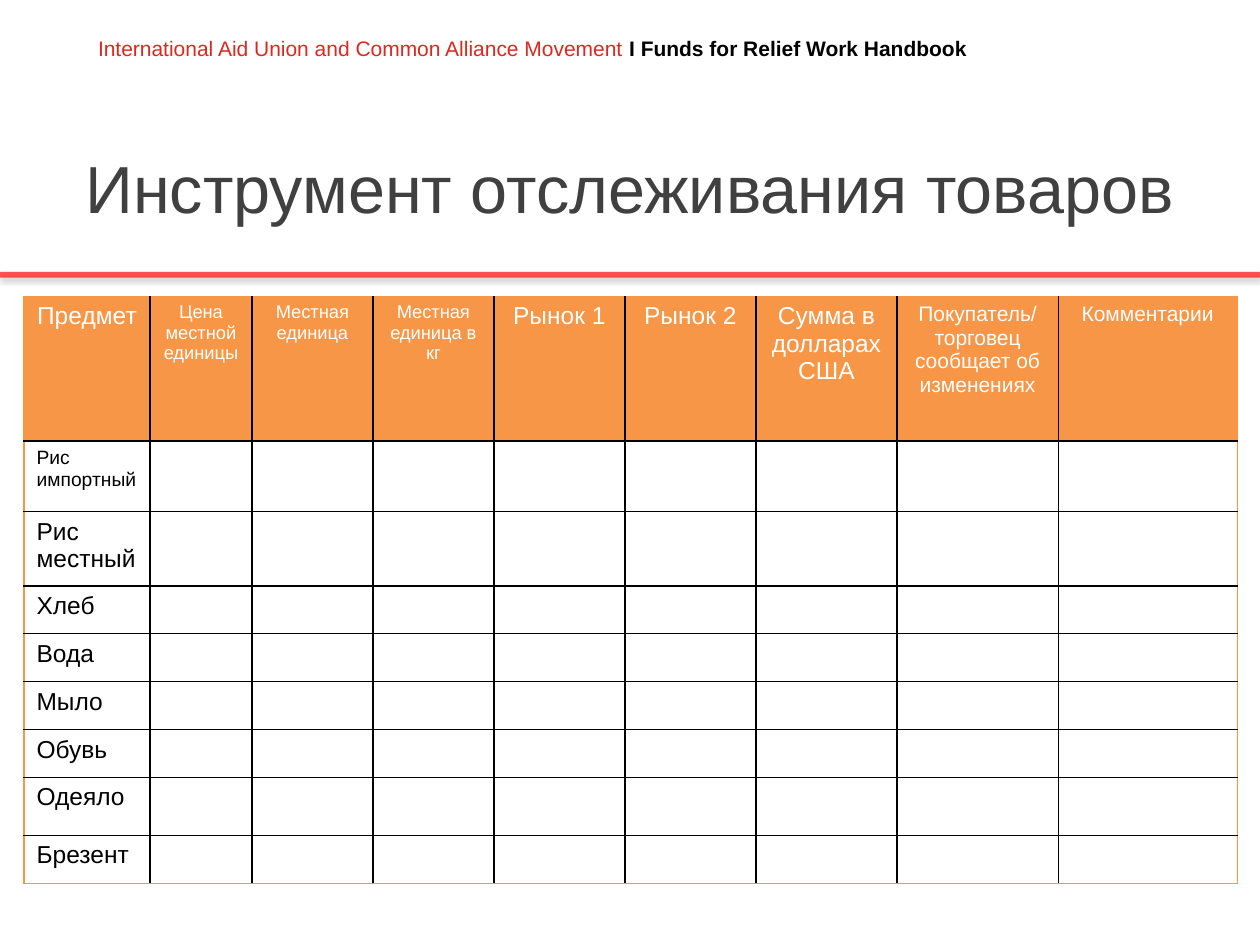
from dataclasses import dataclass

from lxml import etree
from pptx import Presentation
from pptx.dml.color import RGBColor
from pptx.enum.shapes import MSO_CONNECTOR
from pptx.enum.text import MSO_ANCHOR, PP_ALIGN
from pptx.oxml.ns import qn
from pptx.slide import Slide
from pptx.table import Table, _Cell
from pptx.text.text import _Paragraph, _Run
from pptx.util import Inches, Pt

STRAIGHT = MSO_CONNECTOR.STRAIGHT
MIDDLE = MSO_ANCHOR.MIDDLE
LEFT, CENTER = PP_ALIGN.LEFT, PP_ALIGN.CENTER

FONT = "Arial"
BLACK = RGBColor(0, 0, 0)
WHITE = RGBColor(255, 255, 255)
GRAY = RGBColor(0x40, 0x40, 0x40)
BRAND = RGBColor(0xDC, 0x28, 0x1E)
RED = RGBColor(255, 0, 0)
ORANGE = RGBColor(0xF7, 0x96, 0x46)


@dataclass
class Column:
    head: str
    width: float
    size: float = 14


@dataclass
class Row:
    item: str
    height: float = 0.38
    size: float = 14


COLUMNS = [
    Column("Предмет", 1),
    Column("Цена местной единицы", 0.81, 10.5),
    Column("Местная единица", 0.96, 10.5),
    Column("Местная единица в кг", 0.96, 10.5),
    Column("Рынок 1", 1.04),
    Column("Рынок 2", 1.04),
    Column("Сумма в долларах США", 1.12),
    Column("Покупатель/торговец сообщает об изменениях", 1.28, 12),
    Column("Комментарии", 1.42, 12),
]
ROWS = [
    Row("Рис импортный", 0.56, 11),
    Row("Рис местный", 0.59),
    Row("Хлеб"),
    Row("Вода"),
    Row("Мыло"),
    Row("Обувь"),
    Row("Одеяло", 0.46),
    Row("Брезент"),
]
HEAD = 1.15


def style(run: _Run, size: float, color: RGBColor, bold: bool = False) -> None:
    run.font.name = FONT
    run.font.size = Pt(size)
    run.font.bold = bold
    run.font.color.rgb = color


def add_run(para: _Paragraph, text: str, color: RGBColor, bold: bool = False) -> None:
    run = para.add_run()
    run.text = text
    style(run, 12, color, bold)


def add_banner(slide: Slide) -> None:
    box = slide.shapes.add_textbox(Inches(0.68), Inches(0.23), Inches(8.64), Inches(0.3))
    box.text_frame.word_wrap = True
    para = box.text_frame.paragraphs[0]
    add_run(para, "International Aid Union and Common Alliance Movement ", BRAND)
    add_run(para, "I Funds for Relief Work Handbook", BLACK, True)


def add_rule(slide: Slide) -> None:
    rule = slide.shapes.add_connector(STRAIGHT, 0, Inches(2.18), Inches(10), Inches(2.18))
    rule.line.color.rgb = RED
    rule.line.width = Pt(3.25)
    props = rule._element.spPr
    tint = props.find(".//" + qn("a:srgbClr"))
    etree.SubElement(tint, qn("a:alpha"), val="66000")
    glow = etree.SubElement(props, qn("a:effectLst"))
    shade = etree.SubElement(
        glow, qn("a:outerShdw"), blurRad=str(Pt(3.1)), dist=str(Pt(1.6)),
        dir="5400000", rotWithShape="0")
    tint = etree.SubElement(shade, qn("a:srgbClr"), val=str(BLACK))
    etree.SubElement(tint, qn("a:alpha"), val="37000")


def set_title(slide: Slide) -> None:
    title = slide.shapes.title
    title.left, title.top = Inches(0.5), Inches(0.86)
    title.width, title.height = Inches(9), Inches(1.25)
    frame = title.text_frame
    frame.text = "Инструмент отслеживания товаров"
    frame.word_wrap = True
    frame.vertical_anchor = MIDDLE
    para = frame.paragraphs[0]
    para.alignment = CENTER
    style(para.runs[0], 38, GRAY)


def set_edges(cell: _Cell, outer: dict[str, bool]) -> None:
    props = cell._tc.get_or_add_tcPr()
    for side, rim in outer.items():
        width, color = (0.75, ORANGE) if rim else (1, BLACK)
        edge = etree.SubElement(props, qn("a:ln" + side), w=str(Pt(width)))
        fill = etree.SubElement(edge, qn("a:solidFill"))
        etree.SubElement(fill, qn("a:srgbClr"), val=str(color))


def set_text(cell: _Cell, text: str, size: float, head: bool) -> None:
    cell.text_frame.text = text
    para = cell.text_frame.paragraphs[0]
    para.alignment = CENTER if head else LEFT
    if text:
        style(para.runs[0], size, WHITE if head else BLACK)
    else:
        etree.SubElement(para._p, qn("a:endParaRPr"), sz="1400")


def fill_cell(table: Table, row: int, col: int) -> None:
    cell = table.cell(row, col)
    head = row == 0
    set_edges(cell, {
        "L": col == 0,
        "R": col == len(COLUMNS) - 1,
        "T": head,
        "B": row == len(ROWS),
    })
    if head:
        cell.fill.solid()
        cell.fill.fore_color.rgb = ORANGE
        set_text(cell, COLUMNS[col].head, COLUMNS[col].size, True)
    else:
        cell.fill.background()
        entry = ROWS[row - 1]
        set_text(cell, "" if col else entry.item, entry.size, False)


def add_grid(slide: Slide) -> None:
    widths = [col.width for col in COLUMNS]
    heights = [HEAD] + [row.height for row in ROWS]
    table = slide.shapes.add_table(
        len(heights), len(widths), Inches(0.19), Inches(2.35),
        Inches(sum(widths)), Inches(sum(heights))).table
    table.first_row = table.horz_banding = False
    for col, width in enumerate(widths):
        table.columns[col].width = Inches(width)
    for row, height in enumerate(heights):
        table.rows[row].height = Inches(height)
        for col in range(len(widths)):
            fill_cell(table, row, col)


def main() -> None:
    deck = Presentation()
    deck.slide_width, deck.slide_height = Inches(10), Inches(7.5)
    slide = deck.slides.add_slide(deck.slide_layouts[5])
    add_banner(slide)
    add_rule(slide)
    set_title(slide)
    add_grid(slide)
    deck.save("out.pptx")


if __name__ == "__main__":
    main()
